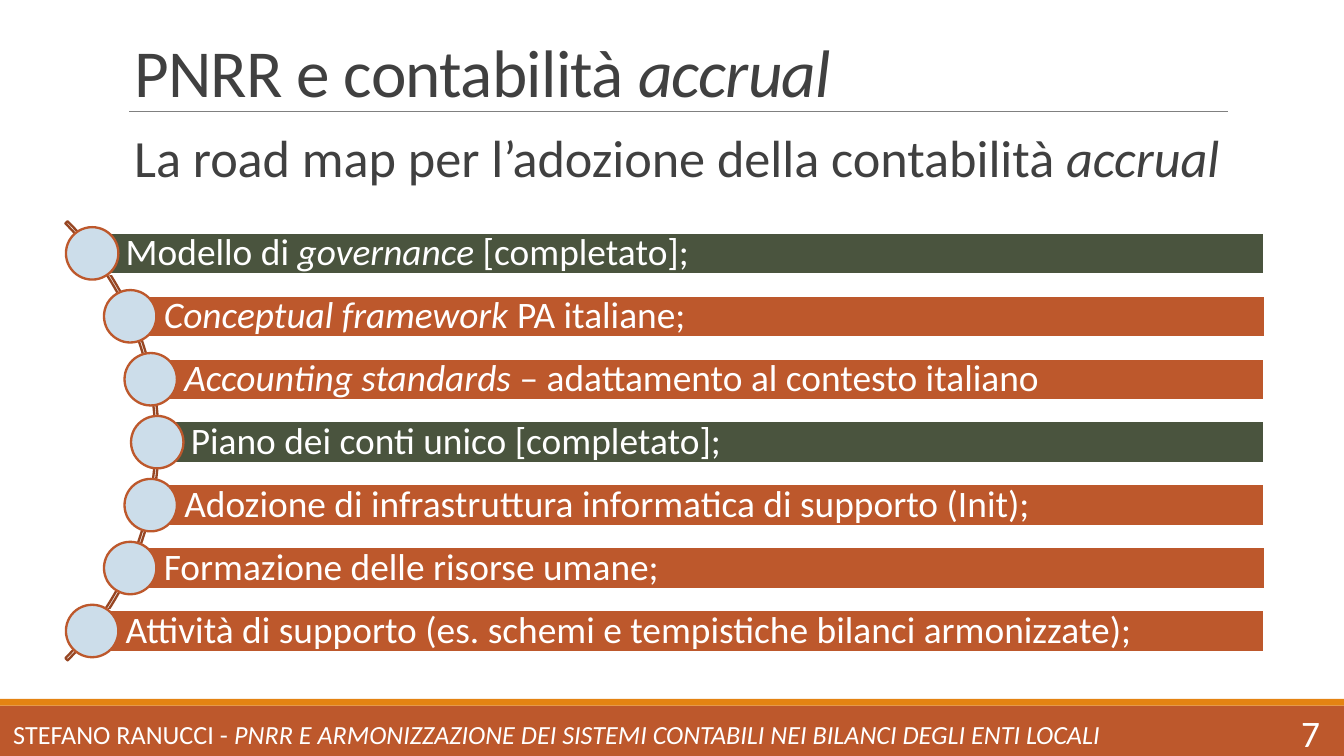
import math
import lxml.etree
import pptx
import pptx.dml.color
import pptx.enum.shapes
import pptx.enum.text
import pptx.oxml.ns
import pptx.util

Inches = pptx.util.Inches
Pt = pptx.util.Pt
PRESET = pptx.enum.shapes.MSO_SHAPE
ANCHOR = pptx.enum.text.MSO_ANCHOR
ALIGN = pptx.enum.text.PP_ALIGN


def rgb(value):
    return pptx.dml.color.RGBColor.from_string(value)


def write(holder, text, size, color, frame_format, paragraph_format, spacing=None):
    frame = holder.text_frame
    for key, value in frame_format.items():
        setattr(frame, key, value)
    paragraph = frame.paragraphs[0]
    for key, value in paragraph_format.items():
        setattr(paragraph, key, value)
    for index, part in enumerate(text.split("*")):
        if not part:
            continue
        run = paragraph.add_run()
        run.text = part
        font_format = {"name": "Calibri", "size": Pt(size), "italic": index % 2 == 1}
        for key, value in font_format.items():
            setattr(run.font, key, value)
        run.font.color.rgb = rgb(color)
        if spacing is not None:
            run.font._element.set("spc", str(spacing))


presentation = pptx.Presentation()
presentation.slide_width = Inches(10)
presentation.slide_height = Inches(10 * 9 / 16)
slide = presentation.slides.add_slide(presentation.slide_layouts[6])
shapes = slide.shapes

for top, height, color in [(5.25, 0.38, "BD582C"), (5.2, 0.05, "E48312")]:
    band = shapes.add_shape(PRESET.RECTANGLE, 0, Inches(top), Inches(10), Inches(height))
    band.shadow.inherit = False
    band.fill.solid()
    band.fill.fore_color.rgb = rgb(color)
    band.line.fill.background()

title_rule = shapes.add_connector(
    pptx.enum.shapes.MSO_CONNECTOR.STRAIGHT,
    Inches(0.96), Inches(0.83), Inches(9.14), Inches(0.83))
title_rule.line.color.rgb = rgb("808080")
title_rule.line.width = Pt(0.5)
lxml.etree.SubElement(title_rule._element.spPr, pptx.oxml.ns.qn("a:effectLst"))

arc = shapes.add_shape(PRESET.BLOCK_ARC, Inches(-3.44), Inches(0.97), Inches(4.62), Inches(4.62))
for index, value in enumerate([189, 27, 0.005]):
    arc.adjustments[index] = value
arc.shadow.inherit = False
arc.fill.background()
arc.line.color.rgb = rgb("974623")
arc.line.width = Pt(1.25)

DONE, OPEN = "4A543E", "BD582C"
steps = [
    ("Modello di *governance* [completato];", DONE),
    ("*Conceptual framework *PA italiane;", OPEN),
    ("*Accounting standards *– adattamento al contesto italiano", OPEN),
    ("Piano dei conti unico [completato];", DONE),
    ("Adozione di infrastruttura informatica di supporto (Init);", OPEN),
    ("Formazione delle risorse umane;", OPEN),
    ("Attività di supporto (es. schemi e tempistiche bilanci armonizzate);", OPEN),
]
bar_format = {
    "word_wrap": True,
    "vertical_anchor": ANCHOR.MIDDLE,
    "margin_left": Inches(0.25),
    "margin_right": Inches(0.06),
    "margin_top": Inches(0.06),
    "margin_bottom": Inches(0.06),
}
arc_x, arc_y, arc_radius = -1.11, 3.29, 2.28
bar_right, bar_height, node_size = 9.41, 0.31, 0.39
pitch = 2.81 / (len(steps) - 1)

for index, (text, color) in enumerate(steps):
    offset = (index - len(steps) // 2) * pitch
    x = arc_x + math.sqrt(arc_radius ** 2 - offset ** 2)
    y = arc_y + offset
    bar = shapes.add_shape(
        PRESET.RECTANGLE, Inches(x), Inches(y - bar_height / 2),
        Inches(bar_right - x), Inches(bar_height))
    node = shapes.add_shape(
        PRESET.OVAL, Inches(x - node_size / 2), Inches(y - node_size / 2),
        Inches(node_size), Inches(node_size))
    for part, fill, outline in [(bar, color, "FFFFFF"), (node, "CCDDEA", "BD582C")]:
        part.shadow.inherit = False
        part.fill.solid()
        part.fill.fore_color.rgb = rgb(fill)
        part.line.color.rgb = rgb(outline)
        part.line.width = Pt(1.25)
    write(bar, text, 20, "FFFFFF", bar_format, {"alignment": ALIGN.LEFT, "line_spacing": 0.9})

captions = [
    ((0.9, 0.24, 8.25, 0.64), "PNRR e contabilità *accrual*", 36, "404040",
     ANCHOR.BOTTOM, {"line_spacing": 0.85}, -40),
    ((0.9, 0.88, 8.56, 0.57), "La road map per l’adozione della contabilità *accrual*", 28, "404040",
     ANCHOR.TOP, {}, None),
    ((0, 5.3, 9.15, 0.33),
     "STEFANO RANUCCI - *PNRR E ARMONIZZAZIONE DEI SISTEMI CONTABILI NEI BILANCI DEGLI ENTI LOCALI*",
     14, "FFFFFF", ANCHOR.MIDDLE, {}, None),
    ((8.84, 5.3, 1.08, 0.3), "7", 20, "FFFFFF", ANCHOR.MIDDLE, {"alignment": ALIGN.RIGHT}, None),
]
for place, text, size, color, anchor, paragraph_format, spacing in captions:
    caption = shapes.add_textbox(*map(Inches, place))
    write(caption, text, size, color, {"word_wrap": True, "vertical_anchor": anchor},
          paragraph_format, spacing)

presentation.save("out.pptx")
